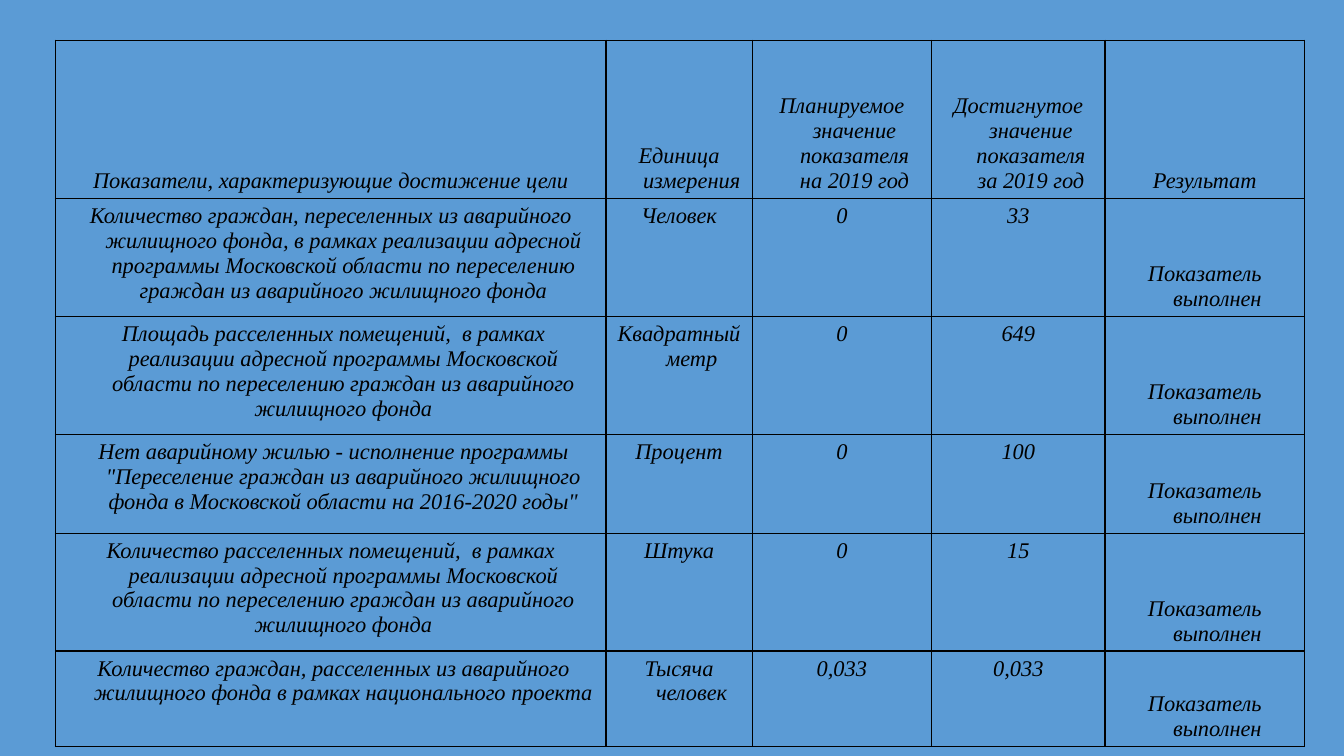
from lxml.etree import SubElement
from pptx import Presentation
from pptx.dml.color import RGBColor
from pptx.enum.text import MSO_ANCHOR, PP_ALIGN
from pptx.oxml.ns import qn
from pptx.util import Inches, Pt

COLORS = {"background": "5B9BD5", "ink": "000000"}
FONT = "Times New Roman"
DONE = "Показатель выполнен"
HEADERS = [
    "Показатели, характеризующие достижение цели",
    "Единица измерения",
    "Планируемое значение показателя на 2019 год",
    "Достигнутое значение показателя за 2019 год",
    "Результат",
]
INDICATORS = [
    ("Количество граждан, переселенных из аварийного жилищного фонда, в рамках реализации адресной "
     "программы Московской области по переселению граждан из аварийного жилищного фонда",
     "Человек", "0", "33", DONE),
    (" Площадь расселенных помещений,  в рамках реализации адресной программы Московской области "
     "по переселению граждан из аварийного жилищного фонда",
     "Квадратный метр", "0", "649", DONE),
    (" Нет аварийному жилью - исполнение программы \"Переселение граждан из аварийного жилищного "
     "фонда в Московской области на 2016-2020 годы\"",
     "Процент", "0", "100", DONE),
    ("Количество расселенных помещений,  в рамках реализации адресной программы Московской области "
     "по переселению граждан из аварийного жилищного фонда",
     "Штука", "0", "15", DONE),
    (" Количество граждан, расселенных из аварийного жилищного фонда в рамках национального проекта",
     "Тысяча человек", "0,033", "0,033", DONE),
]
COLUMN_WIDTHS = [5.46, 1.45, 1.78, 1.72, 1.98]
ROW_HEIGHTS = [1.57, 1.17, 1.17, 0.98, 1.17, 0.95]
LEFT, TOP = 0.55, 0.4


def write_text(cell, text, size=16, color="ink", italic=True, anchor=MSO_ANCHOR.TOP, indent=0.25):
    cell.vertical_anchor = anchor
    paragraph = cell.text_frame.paragraphs[0]
    paragraph.alignment = PP_ALIGN.CENTER
    properties = paragraph._p.get_or_add_pPr()
    properties.set("marL", str(Inches(indent)))
    properties.set("indent", str(-Inches(indent)))
    run = paragraph.add_run()
    run.text = text
    run.font.name = FONT
    run.font.size = Pt(size)
    run.font.italic = italic
    run.font.color.rgb = RGBColor.from_string(COLORS[color])


def draw_borders(cell, width=1, color="ink"):
    properties = cell._tc.get_or_add_tcPr()
    for side in ("lnL", "lnR", "lnT", "lnB"):
        line = SubElement(properties, qn(f"a:{side}"), w=str(Pt(width)))
        fill = SubElement(line, qn("a:solidFill"))
        SubElement(fill, qn("a:srgbClr"), val=COLORS[color])


def main():
    presentation = Presentation()
    presentation.slide_width = Inches(13.33)
    presentation.slide_height = Inches(7.5)
    slide = presentation.slides.add_slide(presentation.slide_layouts[6])
    slide.background.fill.solid()
    slide.background.fill.fore_color.rgb = RGBColor.from_string(COLORS["background"])

    rows = [HEADERS, *INDICATORS]
    table = slide.shapes.add_table(
        len(rows), len(HEADERS), Inches(LEFT), Inches(TOP),
        Inches(sum(COLUMN_WIDTHS)), Inches(sum(ROW_HEIGHTS)),
    ).table
    table.first_row = False
    table.horz_banding = False
    for column, width in zip(table.columns, COLUMN_WIDTHS):
        column.width = Inches(width)
    for row, height in zip(table.rows, ROW_HEIGHTS):
        row.height = Inches(height)

    for row_index, texts in enumerate(rows):
        for column_index, text in enumerate(texts):
            cell = table.cell(row_index, column_index)
            at_bottom = row_index == 0 or column_index == len(HEADERS) - 1
            write_text(cell, text, anchor=MSO_ANCHOR.BOTTOM if at_bottom else MSO_ANCHOR.TOP)
            draw_borders(cell)
            cell.fill.background()

    presentation.save("out.pptx")


if __name__ == "__main__":
    main()
